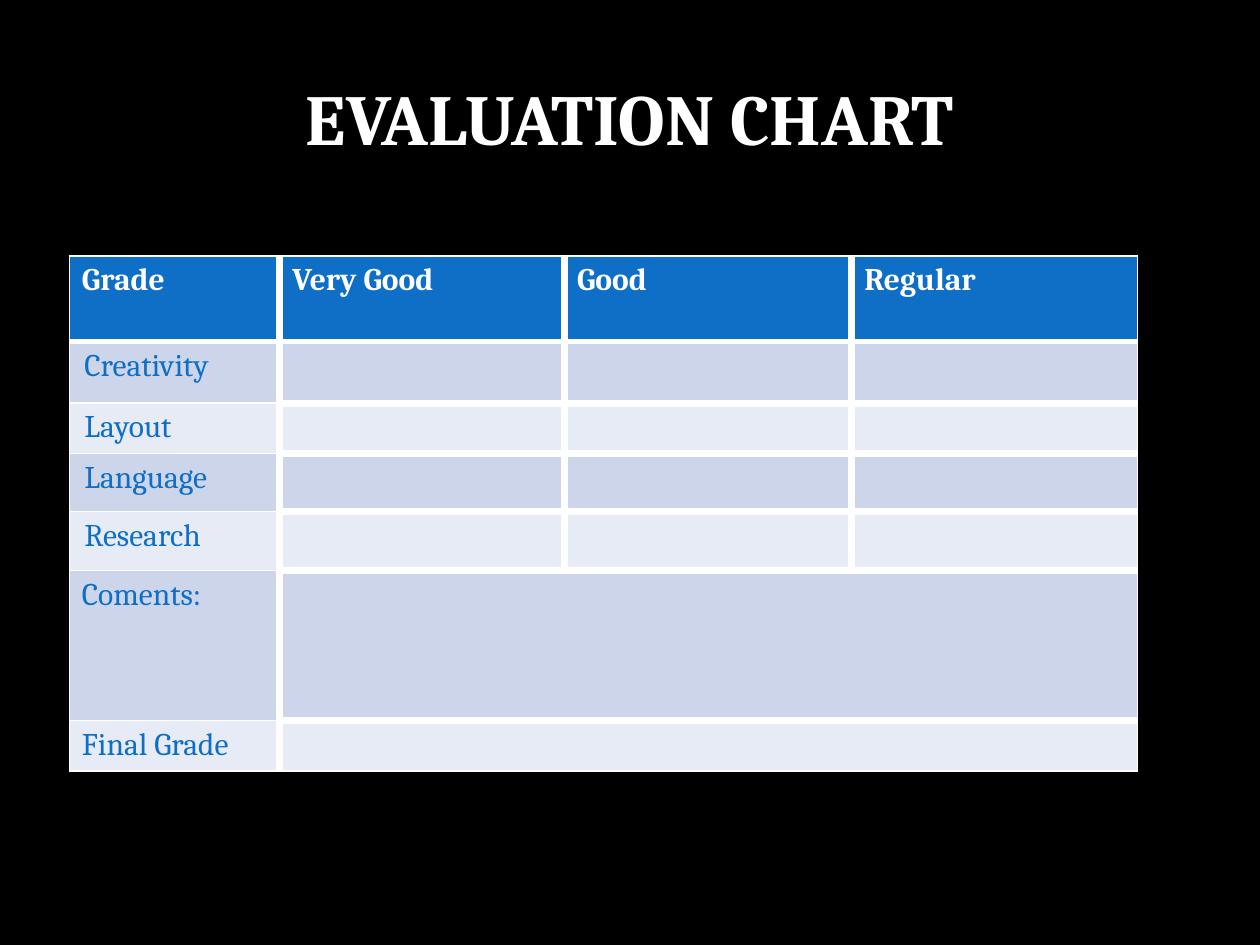
from pptx import Presentation, util as u
from pptx.dml.color import RGBColor
from pptx.enum import text
from pptx.oxml import parse_xml
from pptx.oxml.ns import nsdecls

BLACK = RGBColor(0, 0, 0)
WHITE = RGBColor(255, 255, 255)
BLUE = RGBColor(0x0F, 0x6F, 0xC6)
BANDS = (RGBColor(0xE7, 0xEB, 0xF5), RGBColor(0xCC, 0xD5, 0xEA))
FONT = "Cambria"
THIN, HEADER_RULE, THICK = 1, 3, 4.5

GRADES = ("Grade", "Very Good", "Good", "Regular")
CRITERIA = ("Creativity", "Layout", "Language", "Research")
SUMMARIES = ("Coments:", "Final Grade")
COLUMN_WIDTHS = (1.67, 2.26, 2.28, 2.27)
ROW_HEIGHTS = (0.68, 0.49, 0.39, 0.46, 0.47, 1.19, 0.37)


def style_font(paragraph, size, color, bold):
    """Set the shared typeface with the given size, colour and weight."""
    font = paragraph.font
    font.name, font.size, font.bold = FONT, u.Pt(size), bold
    font.color.rgb = color


def add_title(slide, left, top, width, height):
    """Place the centred heading in the given box."""
    box = slide.shapes.add_textbox(left, top, width, height)
    frame = box.text_frame
    frame.word_wrap = True
    frame.vertical_anchor = text.MSO_ANCHOR.MIDDLE
    heading = frame.paragraphs[0]
    heading.text = "EVALUATION CHART"
    heading.alignment = text.PP_ALIGN.CENTER
    style_font(heading, 41, WHITE, True)


def set_borders(cell, left, right, top, bottom):
    """Draw white cell borders with the given widths in points."""
    properties = cell._tc.get_or_add_tcPr()
    for side, width in zip("LRTB", (left, right, top, bottom)):
        properties.append(parse_xml(
            f'<a:ln{side} {nsdecls("a")} w="{u.Pt(width)}"><a:solidFill>'
            f'<a:srgbClr val="{WHITE}"/></a:solidFill></a:ln{side}>'))


def rule_below(row, column, last_row):
    """Return the width of the border under a cell."""
    if row == 0:
        return HEADER_RULE
    return THIN if column == 0 or row == last_row else THICK


def add_evaluation_table(slide, left, top, width, height):
    """Place the grading table in the given box."""
    labels = (GRADES[0],) + CRITERIA + SUMMARIES
    last_row, last_column = len(labels) - 1, len(GRADES) - 1
    table = slide.shapes.add_table(
        len(labels), len(GRADES), left, top, width, height).table
    for column, column_width in zip(table.columns, COLUMN_WIDTHS):
        column.width = u.Inches(column_width)
    for row, row_height in zip(table.rows, ROW_HEIGHTS):
        row.height = u.Inches(row_height)
    for r in range(len(labels) - len(SUMMARIES), len(labels)):
        table.cell(r, 1).merge(table.cell(r, last_column))

    for r, label in enumerate(labels):
        for c, grade in enumerate(GRADES):
            cell = table.cell(r, c)
            if cell.is_spanned:
                continue
            at_right_edge = c == last_column or cell.is_merge_origin
            set_borders(
                cell,
                THICK if c else THIN,
                THIN if at_right_edge else THICK,
                rule_below(r - 1, c, last_row) if r else THIN,
                rule_below(r, c, last_row))
            cell.fill.solid()
            cell.fill.fore_color.rgb = BANDS[r % 2] if r else BLUE
            if r == 0 or c == 0:
                entry = cell.text_frame.paragraphs[0]
                entry.text = label if c == 0 else grade
                style_font(entry, 18, BLUE if r else WHITE, r == 0)
            if c == 0 and label in CRITERIA:
                cell.margin_left = u.Inches(0.12)


def main():
    """Build and save the evaluation slide."""
    deck = Presentation()
    deck.slide_width, deck.slide_height = u.Inches(10), u.Inches(7.5)
    slide = deck.slides.add_slide(deck.slide_layouts[6])
    slide.background.fill.solid()
    slide.background.fill.fore_color.rgb = BLACK
    add_title(slide, u.Inches(0.5), u.Inches(0.3), u.Inches(9), u.Inches(1.25))
    add_evaluation_table(
        slide, u.Inches(0.55), u.Inches(2.03),
        u.Inches(sum(COLUMN_WIDTHS)), u.Inches(sum(ROW_HEIGHTS)))
    deck.save("out.pptx")


if __name__ == "__main__":
    main()
